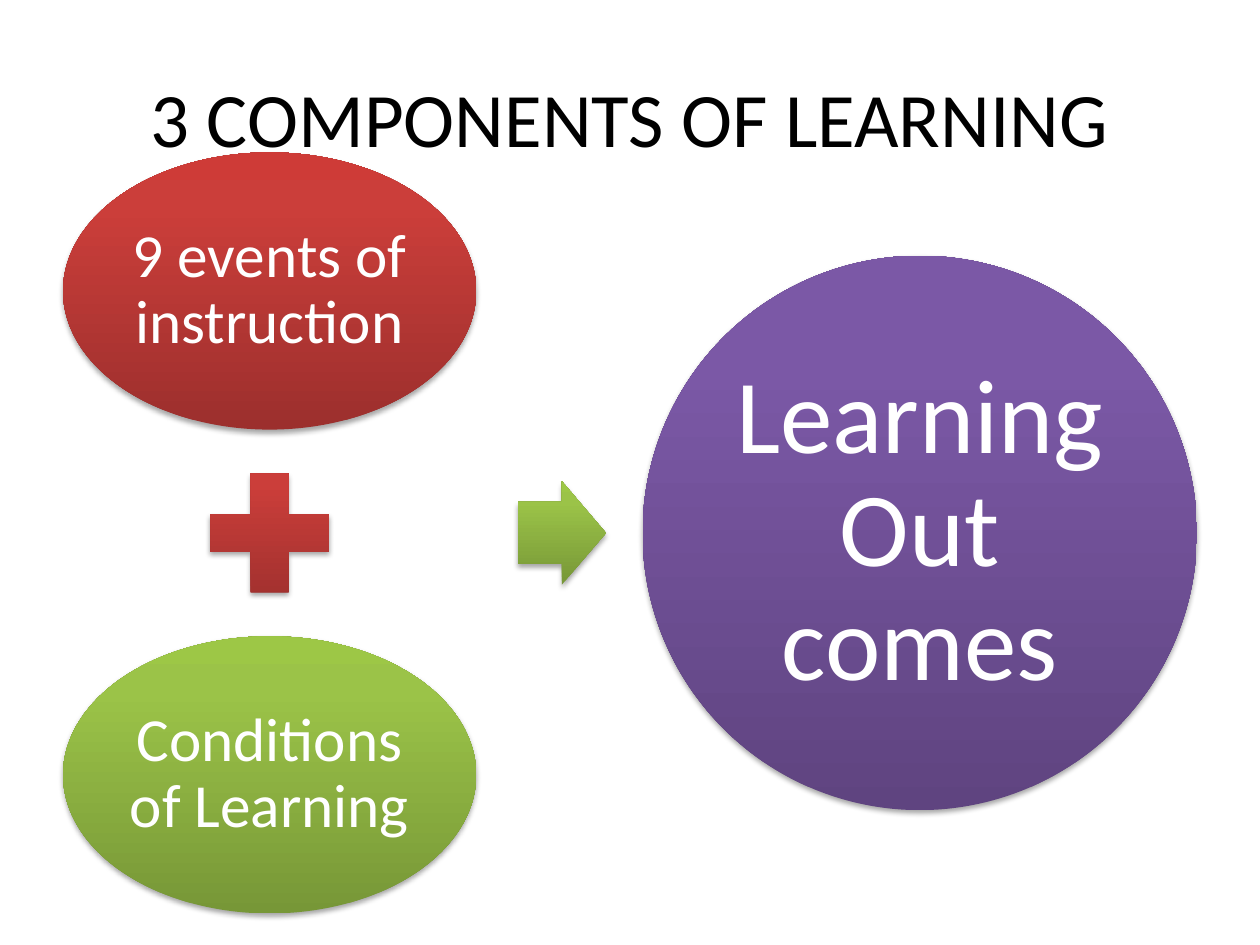
from dataclasses import dataclass

from lxml import etree
from pptx import Presentation
from pptx.dml.color import RGBColor
from pptx.enum.shapes import MSO_SHAPE
from pptx.enum.text import MSO_ANCHOR, PP_ALIGN
from pptx.oxml.ns import qn
from pptx.util import Inches, Pt

ELLIPSE, PLUS, ARROW = MSO_SHAPE.OVAL, MSO_SHAPE.MATH_PLUS, MSO_SHAPE.RIGHT_ARROW
CENTER, MIDDLE = PP_ALIGN.CENTER, MSO_ANCHOR.MIDDLE
TITLE_ONLY = 5


@dataclass(frozen=True)
class Theme:
    font: str = "Calibri"
    title_size: int = 44
    input_size: int = 35
    result_size: int = 60
    title_color: str = "000000"
    label_color: str = "FFFFFF"
    shadow_color: str = "000000"
    # Gradients run from the bottom edge to the top edge.
    stops: tuple = (0, 80, 100)
    red: tuple = ("9C2F2D", "CB3E3A", "CE3B37")
    green: tuple = ("779737", "9BC348", "9DC746")
    purple: tuple = ("5F4480", "7B58A6", "7C57A8")


class SlideBuilder:
    def __init__(self, slide, theme):
        self.slide = slide
        self.theme = theme

    def format_text(self, tf, text, size, color):
        tf.text = text
        tf.word_wrap = True
        tf.vertical_anchor = MIDDLE
        p = tf.paragraphs[0]
        p.alignment = CENTER
        font = p.runs[0].font
        font.name = self.theme.font
        font.size = Pt(size)
        font.color.rgb = RGBColor.from_string(color)
        return p

    def title(self, text, left, top, width, height):
        sp = self.slide.shapes.title
        sp.left, sp.top = Inches(left), Inches(top)
        sp.width, sp.height = Inches(width), Inches(height)
        self.format_text(sp.text_frame, text, self.theme.title_size, self.theme.title_color)

    def gradient(self, sp, colors):
        sp.fill.gradient()
        sp.fill.gradient_angle = 90
        stop_list = sp._element.spPr.find(qn("a:gradFill")).find(qn("a:gsLst"))
        for stop in list(stop_list):
            stop_list.remove(stop)
        for position, color in zip(self.theme.stops, colors):
            stop = etree.SubElement(stop_list, qn("a:gs"), pos=str(position * 1000))
            etree.SubElement(stop, qn("a:srgbClr"), val=color)

    def shadow(self, sp):
        sp.shadow.inherit = False
        effects = sp._element.spPr.find(qn("a:effectLst"))
        outer = etree.SubElement(
            effects, qn("a:outerShdw"), blurRad=str(Pt(3.1)), dist=str(Pt(1.8)),
            dir="5400000", rotWithShape="0")
        color = etree.SubElement(outer, qn("a:srgbClr"), val=self.theme.shadow_color)
        etree.SubElement(color, qn("a:alpha"), val="35000")

    def shape(self, kind, center_x, center_y, width, height, colors):
        """Add a shaded shape placed by its centre."""
        sp = self.slide.shapes.add_shape(
            kind, Inches(center_x - width / 2), Inches(center_y - height / 2),
            Inches(width), Inches(height))
        self.gradient(sp, colors)
        sp.line.fill.background()
        self.shadow(sp)
        return sp

    def labelled_ellipse(self, text, center_x, center_y, width, height, colors, size, inset):
        sp = self.shape(ELLIPSE, center_x, center_y, width, height, colors)
        tf = sp.text_frame
        p = self.format_text(tf, text, size, self.theme.label_color)
        p.line_spacing = 0.9
        tf.margin_left = tf.margin_right = Inches(inset)
        tf.margin_top = tf.margin_bottom = Inches(inset)


def main():
    prs = Presentation()
    prs.slide_width, prs.slide_height = Inches(10), Inches(7.5)
    theme = Theme()
    s = SlideBuilder(prs.slides.add_slide(prs.slide_layouts[TITLE_ONLY]), theme)

    s.title("3 COMPONENTS OF LEARNING", 0.5, 0.3, 9, 1.25)

    input_x, middle_y, input_offset = 2.14, 4.23, 1.92
    inputs = (
        ("9 events of instruction", middle_y - input_offset, theme.red),
        ("Conditions of Learning", middle_y + input_offset, theme.green),
    )
    for text, center_y, colors in inputs:
        s.labelled_ellipse(text, input_x, center_y, 3.28, 2.2, colors, theme.input_size, 0.05)
    s.shape(PLUS, input_x, middle_y, 1.28, 1.28, theme.red)

    arrow = s.shape(ARROW, 4.46, middle_y, 0.7, 0.82, theme.green)
    arrow.adjustments[0] = 0.6
    arrow.adjustments[1] = 0.5

    s.labelled_ellipse("Learning Out comes", 7.3, middle_y, 4.4, 4.4,
                       theme.purple, theme.result_size, 0.08)
    prs.save("out.pptx")


if __name__ == "__main__":
    main()
